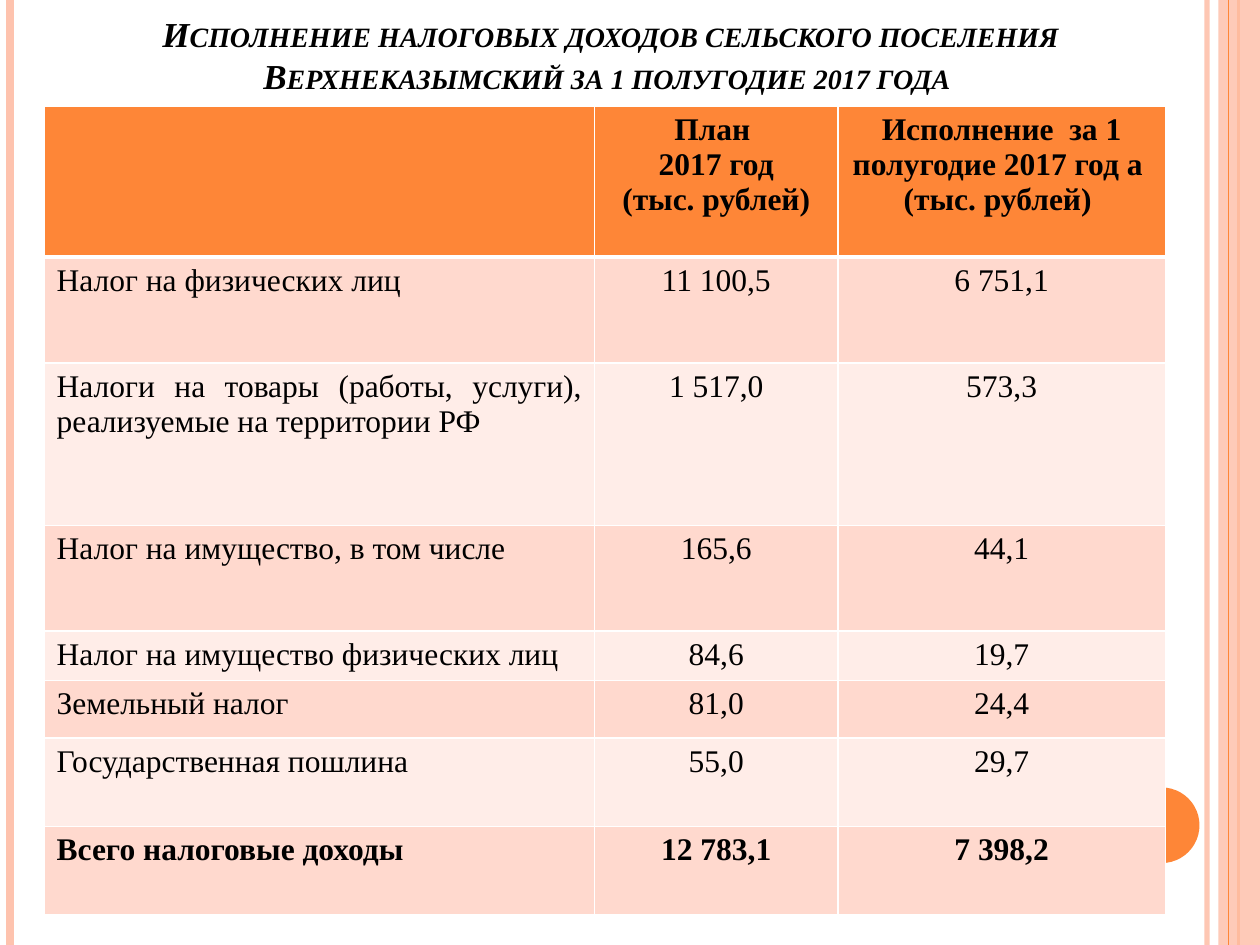
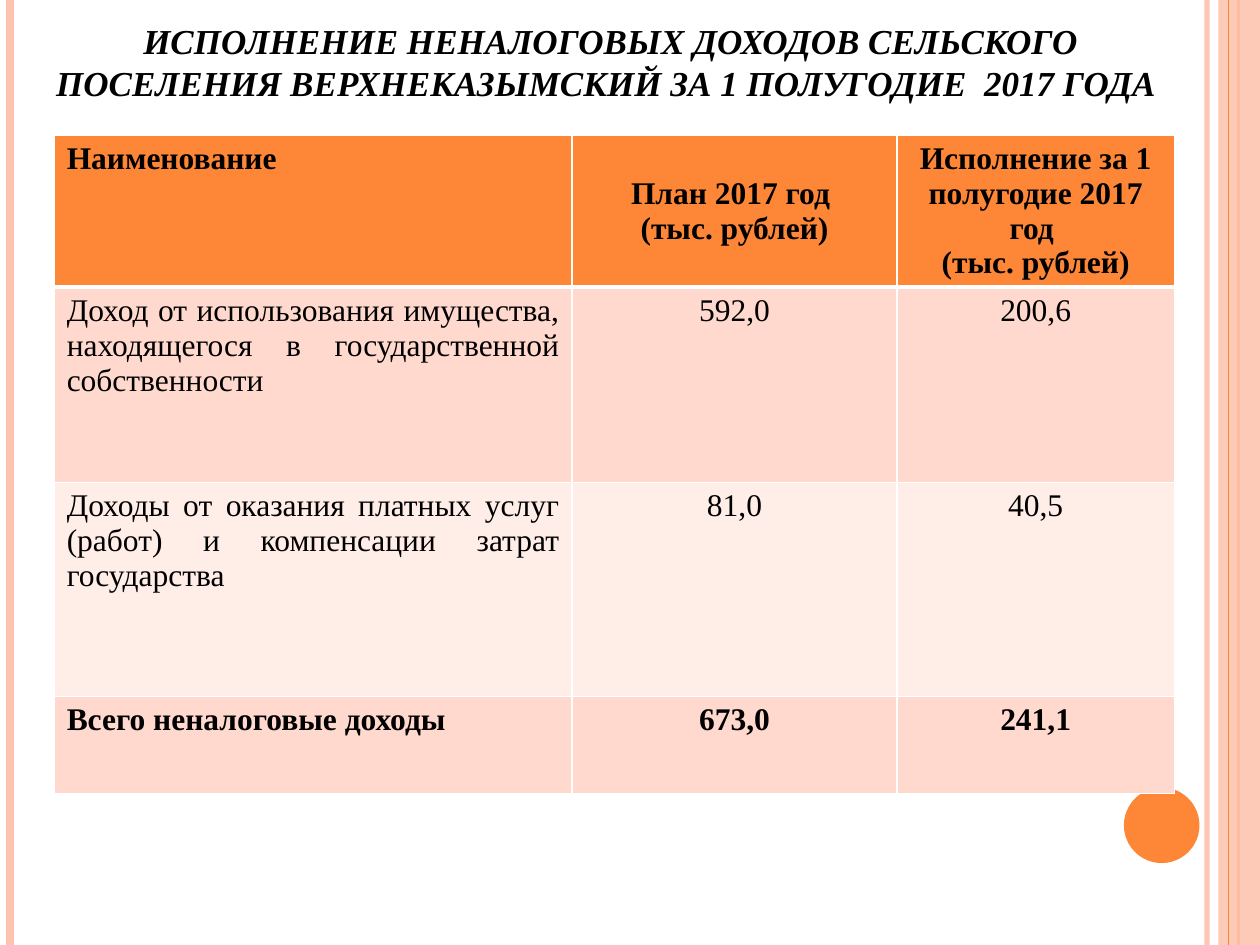
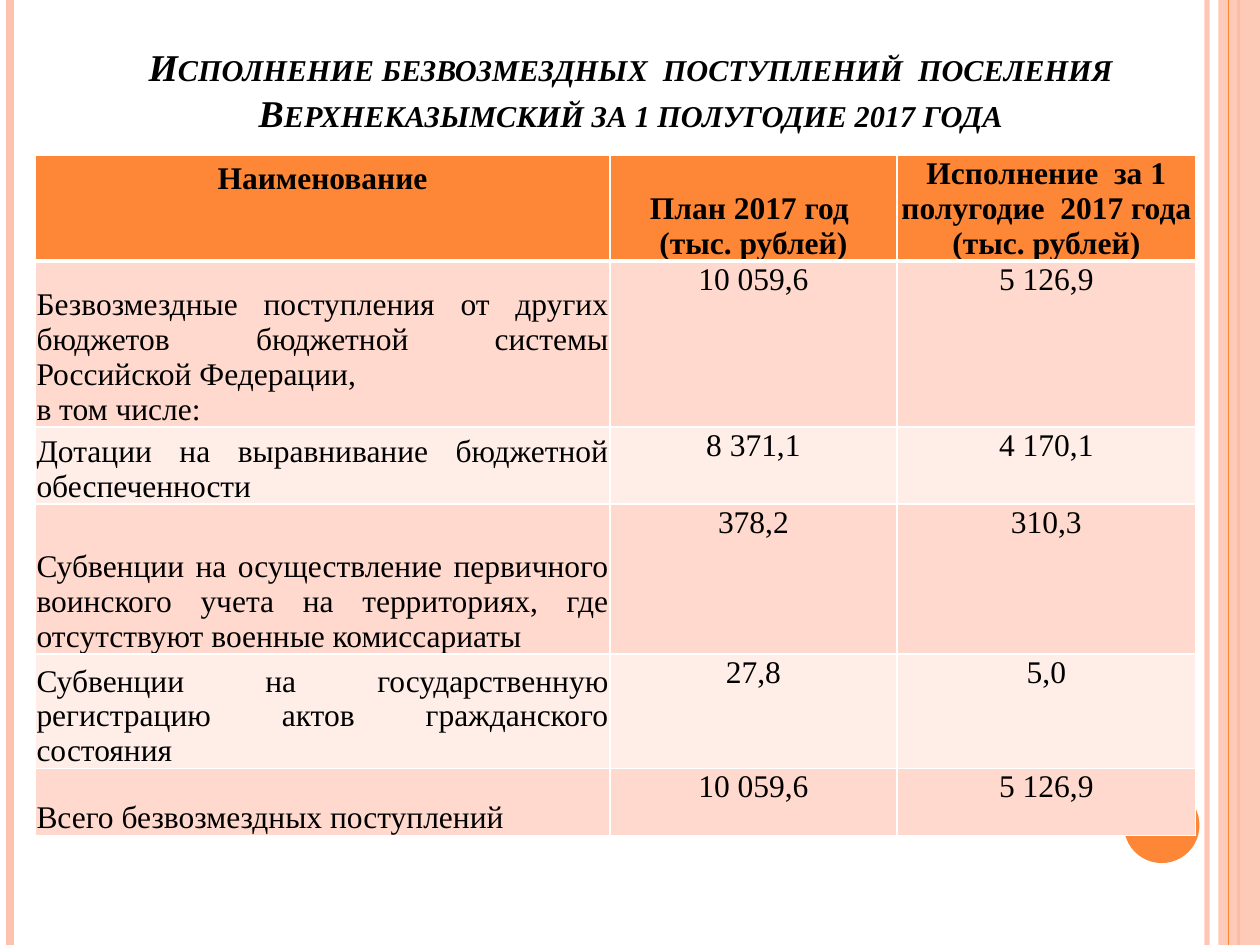
from lxml import etree
from pptx import Presentation
from pptx.dml.color import RGBColor
from pptx.enum.shapes import MSO_CONNECTOR, MSO_SHAPE
from pptx.enum.text import MSO_ANCHOR, MSO_AUTO_SIZE, PP_ALIGN
from pptx.oxml.ns import qn
from pptx.util import Inches, Pt

STRAIGHT = MSO_CONNECTOR.STRAIGHT
RECTANGLE, OVAL = MSO_SHAPE.RECTANGLE, MSO_SHAPE.OVAL
BOTTOM, TOP = MSO_ANCHOR.BOTTOM, MSO_ANCHOR.TOP
LEFT, CENTER, JUSTIFY = PP_ALIGN.LEFT, PP_ALIGN.CENTER, PP_ALIGN.JUSTIFY
NO_AUTOFIT = MSO_AUTO_SIZE.NONE

FONT = "Times New Roman"
ORANGE, PEACH, BLACK, WHITE = "FE8637", "FEC3AE", "000000", "FFFFFF"
BODY_FILLS = ["FFD9CE", "FFEDE8"]
TITLE_ONLY = 5

SLIDES = [
    {
        "title": "Исполнение налоговых доходов сельского поселения "
                 "Верхнеказымский за 1 полугодие 2017 года ",
        "title_box": (0.35, 0.13, 8.99, 1.02), "title_size": 20,
        "title_insets": (0.1, 0.38), "small_caps": True,
        "table_at": (0.35, 0.84), "columns": [4.37, 1.93, 2.6],
        "heights": [1.2, 0.84, 1.29, 0.84, 0.39, 0.46, 0.7, 0.7],
        "name_align": JUSTIFY, "total_align": JUSTIFY,
        "bold_total": True, "tight": False, "plan_top": 0.05,
        "cells": [
            ("", "План \n2017 год\n (тыс. рублей) ",
             "Исполнение  за 1 полугодие 2017 год а \n(тыс. рублей) "),
            ("Налог на физических лиц ", "11 100,5", "6 751,1"),
            ("Налоги на товары (работы, услуги), реализуемые на территории РФ",
             "1 517,0", "573,3"),
            ("Налог на имущество, в том числе ", "165,6", "44,1"),
            ("Налог на имущество физических лиц", "84,6", "19,7"),
            ("Земельный налог ", "81,0", "24,4"),
            ("Государственная пошлина ", "55,0", "29,7"),
            ("Всего налоговые доходы ", "12 783,1", "7 398,2"),
        ],
    },
    {
        "title": "ИСПОЛНЕНИЕ НЕНАЛОГОВЫХ ДОХОДОВ СЕЛЬСКОГО ПОСЕЛЕНИЯ "
                 "ВЕРХНЕКАЗЫМСКИЙ ЗА 1 ПОЛУГОДИЕ  2017 ГОДА ",
        "title_box": (0.35, 0.13, 8.99, 1.02), "title_size": 20,
        "title_insets": (0.05, 0.33), "small_caps": False,
        "table_at": (0.43, 1.07), "columns": [4.11, 2.58, 2.2],
        "heights": [1.19, 1.55, 1.7, 0.77],
        "name_align": LEFT, "total_align": LEFT,
        "bold_total": True, "tight": False, "plan_top": 0.33,
        "cells": [
            ("Наименование", "План 2017 год \n(тыс. рублей)",
             "Исполнение за 1 полугодие 2017 год \n(тыс. рублей)"),
            ("Доход от использования имущества, находящегося "
             "в государственной собственности ", "592,0", "200,6"),
            ("Доходы от оказания платных услуг (работ) "
             "и компенсации затрат государства ", "81,0", "40,5"),
            ("Всего неналоговые доходы", "673,0", "241,1"),
        ],
    },
    {
        "title": "Исполнение безвозмездных  поступлений  поселения "
                 "Верхнеказымский за 1 полугодие 2017 года",
        "title_box": (0.28, 0.29, 9.45, 1.18), "title_size": 21.6,
        "title_insets": (0.1, 0.4), "small_caps": True,
        "table_at": (0.28, 1.23), "columns": [4.56, 2.28, 2.37],
        "heights": [0.79, 1.32, 0.61, 1.19, 0.91, 0.53],
        "name_align": CENTER, "total_align": JUSTIFY,
        "bold_total": False, "tight": True, "plan_top": 0.01,
        "cells": [
            ("Наименование", "План 2017 год \n(тыс. рублей)",
             "Исполнение  за 1 полугодие  2017 года \n(тыс. рублей)"),
            ("Безвозмездные поступления от других бюджетов бюджетной системы "
             "Российской Федерации,\nв том числе: ", "10 059,6", "5 126,9"),
            ("Дотации на выравнивание бюджетной обеспеченности ",
             "8 371,1", "4 170,1"),
            ("Субвенции на осуществление первичного воинского учета "
             "на территориях, где отсутствуют военные комиссариаты ",
             "378,2", "310,3"),
            ("Субвенции на государственную регистрацию актов "
             "гражданского состояния ", "27,8", "5,0"),
            ("Всего безвозмездных поступлений ", "10 059,6", "5 126,9"),
        ],
    },
]


def rgb(color):
    return RGBColor.from_string(color)


def write_run(paragraph, text, size, bold):
    run = paragraph.add_run()
    run.text = text
    run.font.name, run.font.size, run.font.bold = FONT, Pt(size), bold
    run.font.color.rgb = rgb(BLACK)
    return run


presentation = Presentation()
presentation.slide_width, presentation.slide_height = Inches(10), Inches(7.5)
layout = presentation.slide_layouts[TITLE_ONLY]
layout_tree = layout.shapes.element
for placeholder in list(layout.placeholders):
    if placeholder.placeholder_format.idx >= 10:
        layout_tree.remove(placeholder.element)
slides = [presentation.slides.add_slide(layout) for _ in SLIDES]

# Side stripes and disc are drawn once, then moved to the shared layout
decorations = []
shapes = slides[0].shapes
for x, color, width, opacity in [(9.58, PEACH, 3, 93), (0.08, PEACH, 4.5, 100),
                                 (9.83, ORANGE, 1.5, 100), (9.75, ORANGE, 0.75, 100)]:
    stripe = shapes.add_connector(STRAIGHT, Inches(x), 0, Inches(x), Inches(7.5))
    stripe.line.color.rgb, stripe.line.width = rgb(color), Pt(width)
    etree.SubElement(stripe.element.spPr, qn("a:effectLst"))
    decorations.append((stripe, opacity))
for kind, box, color, opacity in [(RECTANGLE, (9.67, 0, 0.33, 7.5), PEACH, 87),
                                  (OVAL, (8.92, 6.25, 0.6, 0.6), ORANGE, 100)]:
    shape = shapes.add_shape(kind, *map(Inches, box))
    shape.shadow.inherit = False
    shape.fill.solid()
    shape.fill.fore_color.rgb = rgb(color)
    shape.line.fill.background()
    decorations.append((shape, opacity))
# The thin orange stripe lies above the side band
decorations.insert(4, decorations.pop(3))
for shape, opacity in decorations:
    if opacity < 100:
        color_element = next(shape.element.spPr.iter(qn("a:srgbClr")))
        etree.SubElement(color_element, qn("a:alpha"), val=str(opacity * 1000))
    layout_tree.append(shape.element)

for slide, content in zip(slides, SLIDES):
    title = slide.shapes.title
    title.left, title.top, title.width, title.height = map(Inches, content["title_box"])
    frame = title.text_frame
    frame.word_wrap, frame.auto_size, frame.vertical_anchor = True, NO_AUTOFIT, BOTTOM
    side, bottom = content["title_insets"]
    frame.margin_left = frame.margin_right = Inches(side)
    frame.margin_top, frame.margin_bottom = 0, Inches(bottom)
    paragraph = frame.paragraphs[0]
    paragraph.alignment = CENTER
    run = write_run(paragraph, content["title"], content["title_size"], True)
    run.font.italic = True
    if content["small_caps"]:
        run.font._element.set("cap", "small")

    rows, columns, heights = content["cells"], content["columns"], content["heights"]
    left, top = content["table_at"]
    table = slide.shapes.add_table(
        len(rows), len(columns), Inches(left), Inches(top),
        Inches(sum(columns)), Inches(sum(heights))).table
    table.first_row = table.horz_banding = False
    for column, width in zip(table.columns, columns):
        column.width = Inches(width)
    last = len(rows) - 1
    for r, row in enumerate(rows):
        table.rows[r].height = Inches(heights[r])
        for c, text in enumerate(row):
            cell = table.cell(r, c)
            cell_properties = cell._tc.get_or_add_tcPr()
            for edge in "LRTB":
                thick = (r, edge) in [(0, "B"), (1, "T")]
                border = etree.SubElement(cell_properties, qn("a:ln" + edge),
                                          w=str(Pt(3 if thick else 1)))
                border_fill = etree.SubElement(border, qn("a:solidFill"))
                etree.SubElement(border_fill, qn("a:srgbClr"), val=WHITE)
            cell.fill.solid()
            cell.fill.fore_color.rgb = rgb(BODY_FILLS[(r - 1) % 2] if r else ORANGE)

            if content["tight"] and (r, c) != (0, 0):
                cell.margin_left = cell.margin_right = cell.margin_top = Inches(0.01)
                cell.margin_bottom = 0
                cell.vertical_anchor = BOTTOM if r == 0 or c == 0 else TOP
            elif (r, c) == (0, 1):
                cell.margin_top = Inches(content["plan_top"])

            if c > 0:
                alignment = CENTER
            elif r == 0:
                alignment = content["name_align"]
            else:
                alignment = content["total_align"] if r == last else JUSTIFY
            bold = r == 0 or (r == last and content["bold_total"])
            for i, line in enumerate(text.split("\n") if text else []):
                cell_frame = cell.text_frame
                paragraph = cell_frame.add_paragraph() if i else cell_frame.paragraphs[0]
                paragraph.alignment = alignment
                write_run(paragraph, line, 18, bold)

presentation.save("out.pptx")
